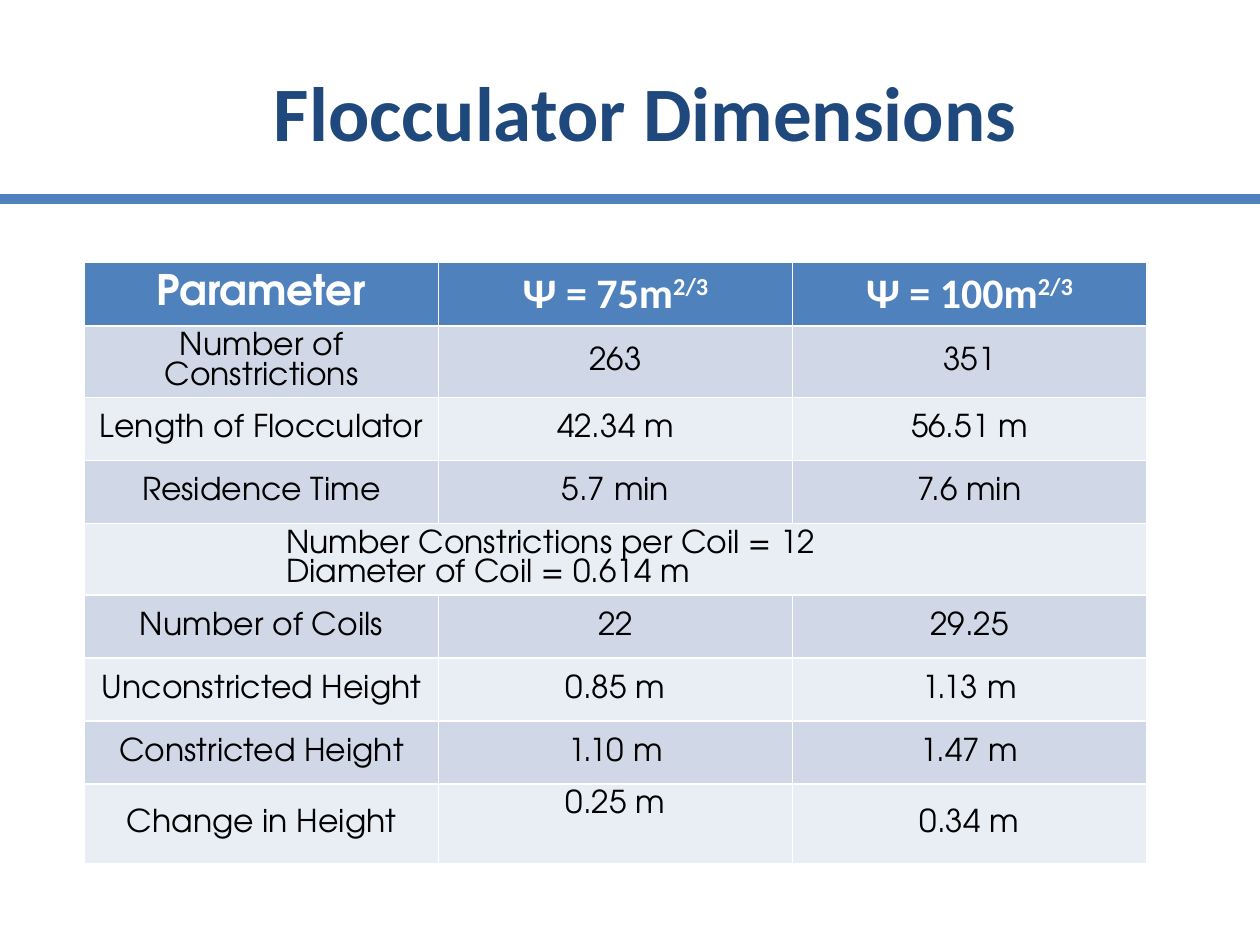
from lxml import etree
from pptx import Presentation
from pptx.dml.color import RGBColor
from pptx.enum.shapes import MSO_CONNECTOR
from pptx.enum.text import MSO_ANCHOR, PP_ALIGN
from pptx.oxml.ns import qn
from pptx.util import Inches, Pt

CENTER, LEFT = PP_ALIGN.CENTER, PP_ALIGN.LEFT
TOP, MIDDLE = MSO_ANCHOR.TOP, MSO_ANCHOR.MIDDLE
STRAIGHT = MSO_CONNECTOR.STRAIGHT

HEADING_FONT, BODY_FONT = "Calibri", "TeX Gyre Adventor"
NAVY, BLUE, WHITE, BLACK = "1F497D", "4F81BD", "FFFFFF", "000000"
BANDS = ["E9EDF4", "D0D8E8"]

TITLE = "Flocculator Dimensions"
# Each header: base text, superscript, font
HEADERS = [
    ("Parameter", "", BODY_FONT),
    ("Ψ = 75m", "2/3", HEADING_FONT),
    ("Ψ = 100m", "2/3", HEADING_FONT),
]
COIL_NOTE = ["Number Constrictions per Coil = 12", "Diameter of Coil = 0.614 m"]
ROWS = [
    ("Number of Constrictions", "263", "351"),
    ("Length of Flocculator", "42.34 m", "56.51 m"),
    ("Residence Time", "5.7 min", "7.6 min"),
    COIL_NOTE,
    ("Number of Coils", "22", "29.25"),
    ("Unconstricted Height", "0.85 m", "1.13 m"),
    ("Constricted Height", "1.10 m", "1.47 m"),
    ("Change in Height", "0.25 m", "0.34 m"),
]
COLUMN_WIDTH, ROW_HEIGHT, LAST_ROW_HEIGHT = 2.81, 0.5, 0.63


def rgb(color):
    return RGBColor.from_string(color)


def write(frame, lines, size=18, font=BODY_FONT, color=BLACK, bold=False,
          align=CENTER, superscript=""):
    """Fill a text frame, one paragraph a line; superscript follows the last."""
    for index, line in enumerate(lines):
        paragraph = frame.paragraphs[0] if index == 0 else frame.add_paragraph()
        paragraph.alignment = align
        parts = [(line, False)]
        if superscript and index == len(lines) - 1:
            parts.append((superscript, True))
        for text, raised in parts:
            run = paragraph.add_run()
            run.text = text
            run.font.size = Pt(size)
            run.font.name = font
            run.font.bold = bold
            run.font.color.rgb = rgb(color)
            if raised:
                run.font._element.set("baseline", "30000")


def style_cell(cell, fill, anchor=MIDDLE):
    cell.fill.solid()
    cell.fill.fore_color.rgb = rgb(fill)
    cell.vertical_anchor = anchor


def add_rule(slide):
    rule = slide.shapes.add_connector(
        STRAIGHT, Inches(0), Inches(1.58), Inches(10), Inches(1.58))
    rule.line.color.rgb = rgb(BLUE)
    rule.line.width = Pt(6)
    etree.SubElement(rule._element.spPr, qn("a:effectLst"))


def add_title(slide):
    title = slide.shapes.title
    title.left, title.top = Inches(0.5), Inches(0.25)
    title.width, title.height = Inches(9.25), Inches(1.25)
    title.text_frame.vertical_anchor = MIDDLE
    write(title.text_frame, [TITLE], size=44, font=HEADING_FONT,
          color=NAVY, bold=True)


def add_dimensions_table(slide):
    row_count, column_count = len(ROWS) + 1, len(HEADERS)
    table = slide.shapes.add_table(
        row_count, column_count, Inches(0.67), Inches(2.08),
        Inches(COLUMN_WIDTH * column_count),
        Inches(ROW_HEIGHT * len(ROWS) + LAST_ROW_HEIGHT)).table
    for column in table.columns:
        column.width = Inches(COLUMN_WIDTH)
    for row in table.rows:
        row.height = Inches(ROW_HEIGHT)
    table.rows[row_count - 1].height = Inches(LAST_ROW_HEIGHT)

    for column, (text, superscript, font) in enumerate(HEADERS):
        cell = table.cell(0, column)
        style_cell(cell, BLUE)
        write(cell.text_frame, [text], size=24, font=font, color=WHITE,
              bold=True, superscript=superscript)

    for row, values in enumerate(ROWS, start=1):
        fill = BANDS[row % 2]
        if values is COIL_NOTE:
            cell = table.cell(row, 0)
            cell.merge(table.cell(row, column_count - 1))
            style_cell(cell, fill)
            cell.margin_left = Inches(1.6)
            write(cell.text_frame, values, align=LEFT)
            continue
        for column, value in enumerate(values):
            cell = table.cell(row, column)
            style_cell(cell, fill, TOP if value == "0.25 m" else MIDDLE)
            write(cell.text_frame, [value])


def main():
    presentation = Presentation()
    presentation.slide_width, presentation.slide_height = Inches(10), Inches(7.5)
    slide = presentation.slides.add_slide(presentation.slide_layouts[5])
    add_rule(slide)
    add_title(slide)
    add_dimensions_table(slide)
    presentation.save("out.pptx")


if __name__ == "__main__":
    main()
